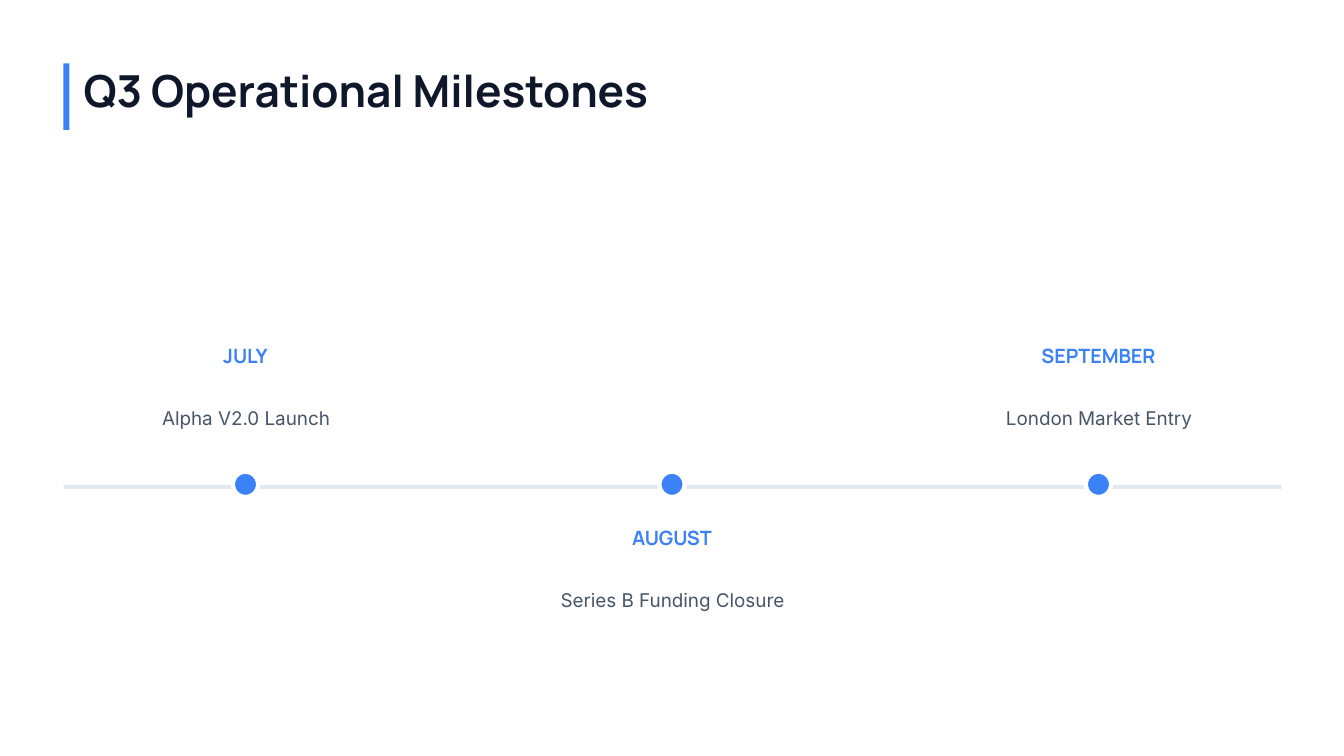
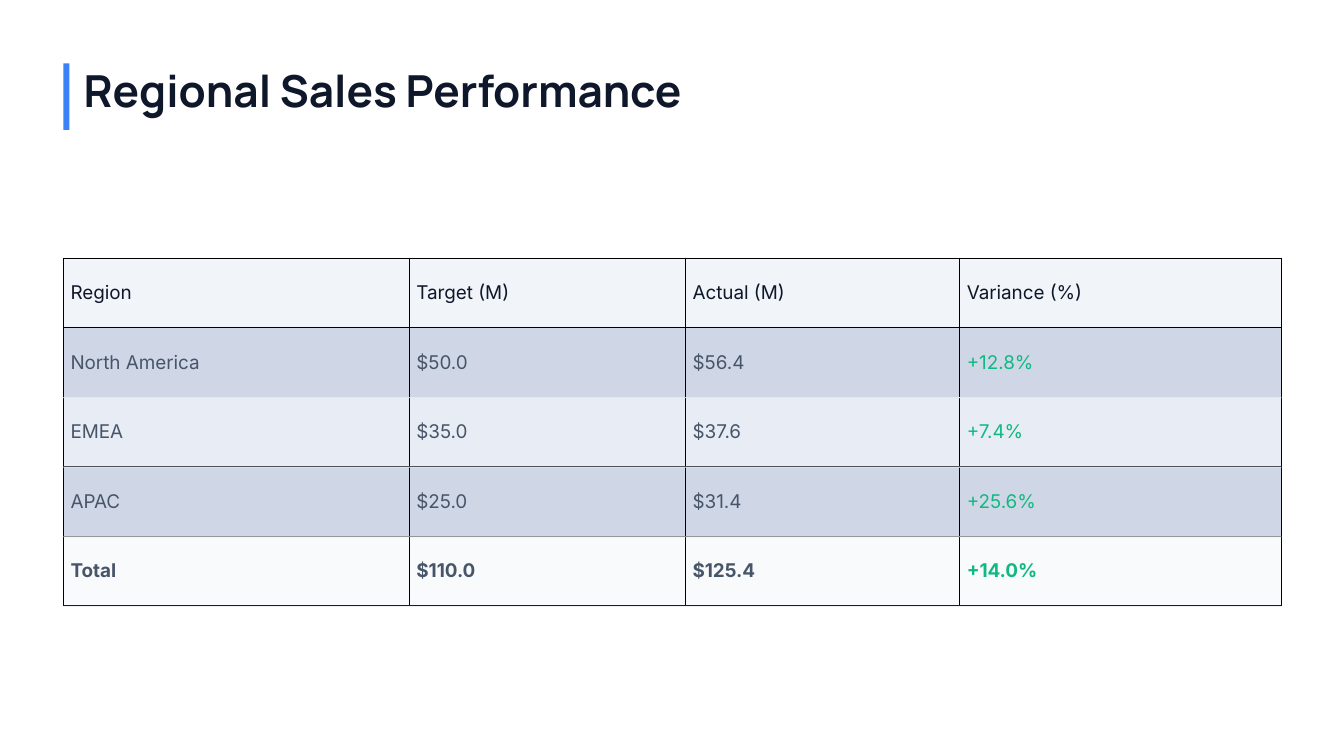
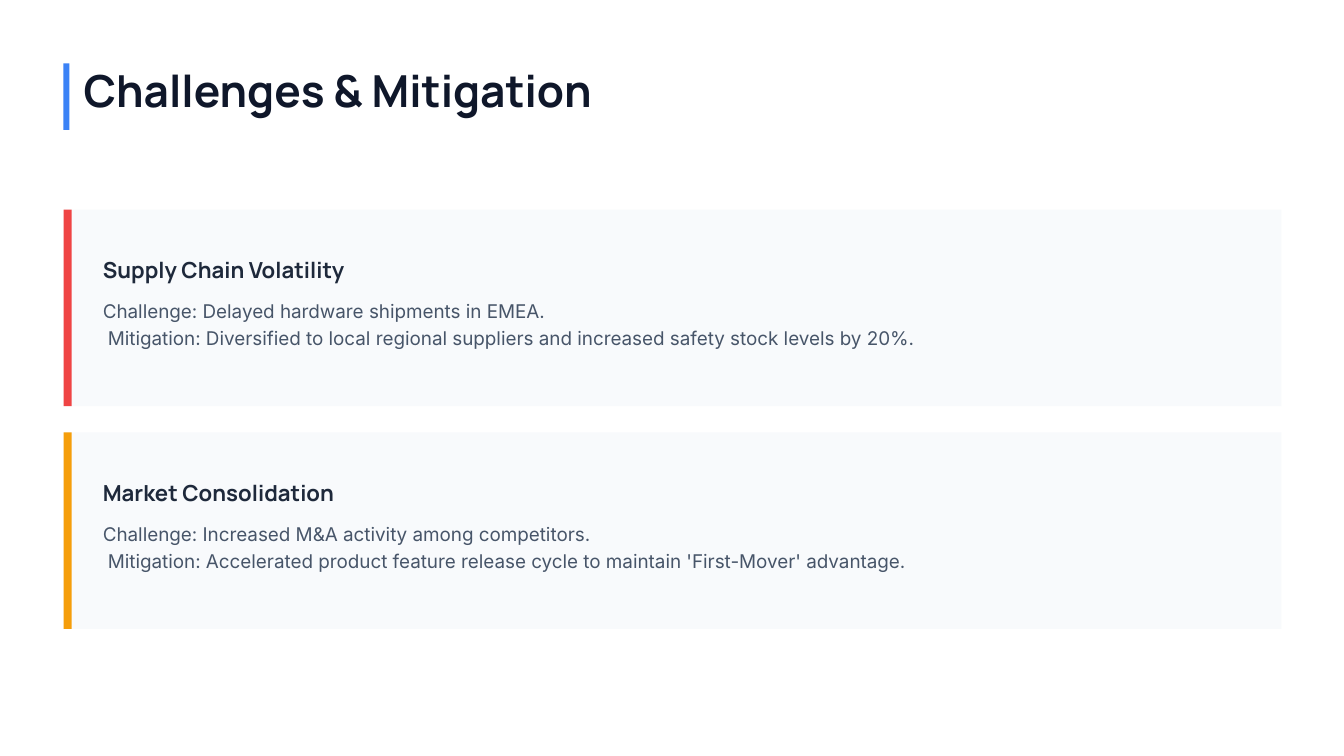
"""Build a three-slide quarterly review: milestones, regional sales, challenges."""
from lxml import etree
from pptx import Presentation
from pptx.dml.color import RGBColor
from pptx.enum.shapes import MSO_SHAPE as SHAPE
from pptx.enum.text import MSO_ANCHOR as ANCHOR, MSO_AUTO_SIZE as AUTO, PP_ALIGN as ALIGN
from pptx.oxml.ns import qn
from pptx.util import Inches, Pt

rgb = RGBColor.from_string
BLUE, INK, SLATE, BODY = "3B82F6", "0F172A", "1E293B", "475569"
RULE, PANEL, GREEN = "E2E8F0", "F8FAFC", "10B981"
HEAD_FONT, BODY_FONT = "Manrope", "Inter"
LEFT, WIDTH = 0.63, 12.08


def write(tf, text, size=13.5, font=BODY_FONT, color=BODY, bold=False,
          align=ALIGN.LEFT, spacing=1.0, hang=0, frame=True):
    """Fill a text frame, one paragraph per line; hang indents the later lines."""
    if frame:
        tf.margin_left = tf.margin_right = tf.margin_top = tf.margin_bottom = 0
        tf.word_wrap = True
        tf.vertical_anchor = ANCHOR.TOP
        tf.auto_size = AUTO.SHAPE_TO_FIT_TEXT
    for i, line in enumerate(text.split("\n")):
        p = tf.paragraphs[0] if i == 0 else tf.add_paragraph()
        p.alignment = align
        p.line_spacing = spacing
        if i and hang:
            p._p.get_or_add_pPr().set("marL", str(Inches(hang)))
        r = p.add_run()
        r.text = line
        r.font.name, r.font.size, r.font.bold = font, Pt(size), bold
        r.font.color.rgb = rgb(color)


def block(s, x, y, w, h, fill, kind=SHAPE.RECTANGLE):
    """Add a plain filled shape without outline or shadow."""
    sp = s.shapes.add_shape(kind, Inches(x), Inches(y), Inches(w), Inches(h))
    sp.shadow.inherit = False
    sp.fill.solid()
    sp.fill.fore_color.rgb = rgb(fill)
    sp.line.fill.background()
    return sp


prs = Presentation()
prs.slide_width, prs.slide_height = Inches(13.33), Inches(7.5)

slides = []
for title in ("Q3 Operational Milestones", "Regional Sales Performance", "Challenges & Mitigation"):
    s = prs.slides.add_slide(prs.slide_layouts[5])
    sp = s.shapes.title
    sp.left, sp.top, sp.width, sp.height = Inches(0.83), Inches(0.63), Inches(10.72), Inches(0.52)
    write(sp.text_frame, title, size=31.5, font=HEAD_FONT, color=INK, bold=True)
    block(s, LEFT, 0.63, 0.06, 0.66, BLUE)
    slides.append(s)
timeline, sales, risks = slides

block(timeline, LEFT, 4.81, WIDTH, 0.04, RULE)
milestones = [("JULY", "Alpha V2.0 Launch", 3.41),
              ("AUGUST", "Series B Funding Closure", 5.22),
              ("SEPTEMBER", "London Market Entry", 3.41)]
for i, (month, event, y) in enumerate(milestones):
    x = 0.53 + 4.23 * i
    tb = timeline.shapes.add_textbox(Inches(x), Inches(y), Inches(3.81), Inches(0.23))
    write(tb.text_frame, month, size=14.1, font=HEAD_FONT, color=BLUE, bold=True, align=ALIGN.CENTER)
    tb = timeline.shapes.add_textbox(Inches(x + 0.1), Inches(y + 0.49), Inches(3.62), Inches(0.36))
    write(tb.text_frame, event, align=ALIGN.CENTER, spacing=1.6)
    dot = block(timeline, x + 1.78, 4.68, 0.25, 0.25, BLUE, SHAPE.ROUNDED_RECTANGLE)
    dot.adjustments[0] = 0.5
    dot.line.color.rgb = rgb("FFFFFF")
    dot.line.width = Pt(3)

rows = [("Region", "Target (M)", "Actual (M)", "Variance (%)"),
        ("North America", "$50.0", "$56.4", "+12.8%"),
        ("EMEA", "$35.0", "$37.6", "+7.4%"),
        ("APAC", "$25.0", "$31.4", "+25.6%"),
        ("Total", "$110.0", "$125.4", "+14.0%")]
row_fills = ["F1F5F9", "CFD7E7", "E8ECF4", "CFD7E7", PANEL]
col_widths = [3.43, 2.74, 2.72, 3.19]
top, row_h = 2.56, 0.69
table = sales.shapes.add_table(len(rows), len(col_widths), Inches(LEFT), Inches(top),
                               Inches(WIDTH), Inches(row_h * len(rows))).table
table.first_row = table.horz_banding = False
for j, w in enumerate(col_widths):
    table.columns[j].width = Inches(w)
for i, row in enumerate(rows):
    table.rows[i].height = Inches(row_h)
    for j, value in enumerate(row):
        cell = table.cell(i, j)
        cell.margin_left = cell.margin_right = Inches(0.07)
        cell.margin_top = cell.margin_bottom = Inches(0.05)
        cell.vertical_anchor = ANCHOR.MIDDLE
        tcPr = cell._tc.get_or_add_tcPr()
        for side in ("a:lnL", "a:lnR", "a:lnT", "a:lnB"):
            ln = etree.SubElement(tcPr, qn(side), w=str(Pt(0.75)))
            etree.SubElement(etree.SubElement(ln, qn("a:solidFill")), qn("a:srgbClr"), val="000000")
        cell.fill.solid()
        cell.fill.fore_color.rgb = rgb(row_fills[i])
        color = INK if i == 0 else GREEN if j == 3 else BODY
        write(cell.text_frame, value, color=color, bold=i == len(rows) - 1, frame=False)
        if i:
            block(sales, LEFT + sum(col_widths[:j]), top + row_h * (i + 1), col_widths[j], 0.01, RULE)

challenges = [
    ("Supply Chain Volatility", "EF4444",
     "Challenge: Delayed hardware shipments in EMEA.\n"
     "Mitigation: Diversified to local regional suppliers and increased safety stock levels by 20%."),
    ("Market Consolidation", "F59E0B",
     "Challenge: Increased M&A activity among competitors.\n"
     "Mitigation: Accelerated product feature release cycle to maintain 'First-Mover' advantage."),
]
for i, (heading, accent, detail) in enumerate(challenges):
    y = 2.08 + 2.21 * i
    block(risks, LEFT, y, WIDTH, 1.95, PANEL)
    block(risks, LEFT, y, 0.08, 1.95, accent)
    tb = risks.shapes.add_textbox(Inches(1.02), Inches(y + 0.31), Inches(11.94), Inches(0.42))
    write(tb.text_frame, heading, size=15.8, font=HEAD_FONT, color=SLATE, bold=True, spacing=1.6)
    tb = risks.shapes.add_textbox(Inches(1.02), Inches(y + 0.85), Inches(11.37), Inches(0.54))
    write(tb.text_frame, detail, spacing=1.2, hang=0.05)

prs.save("out.pptx")
